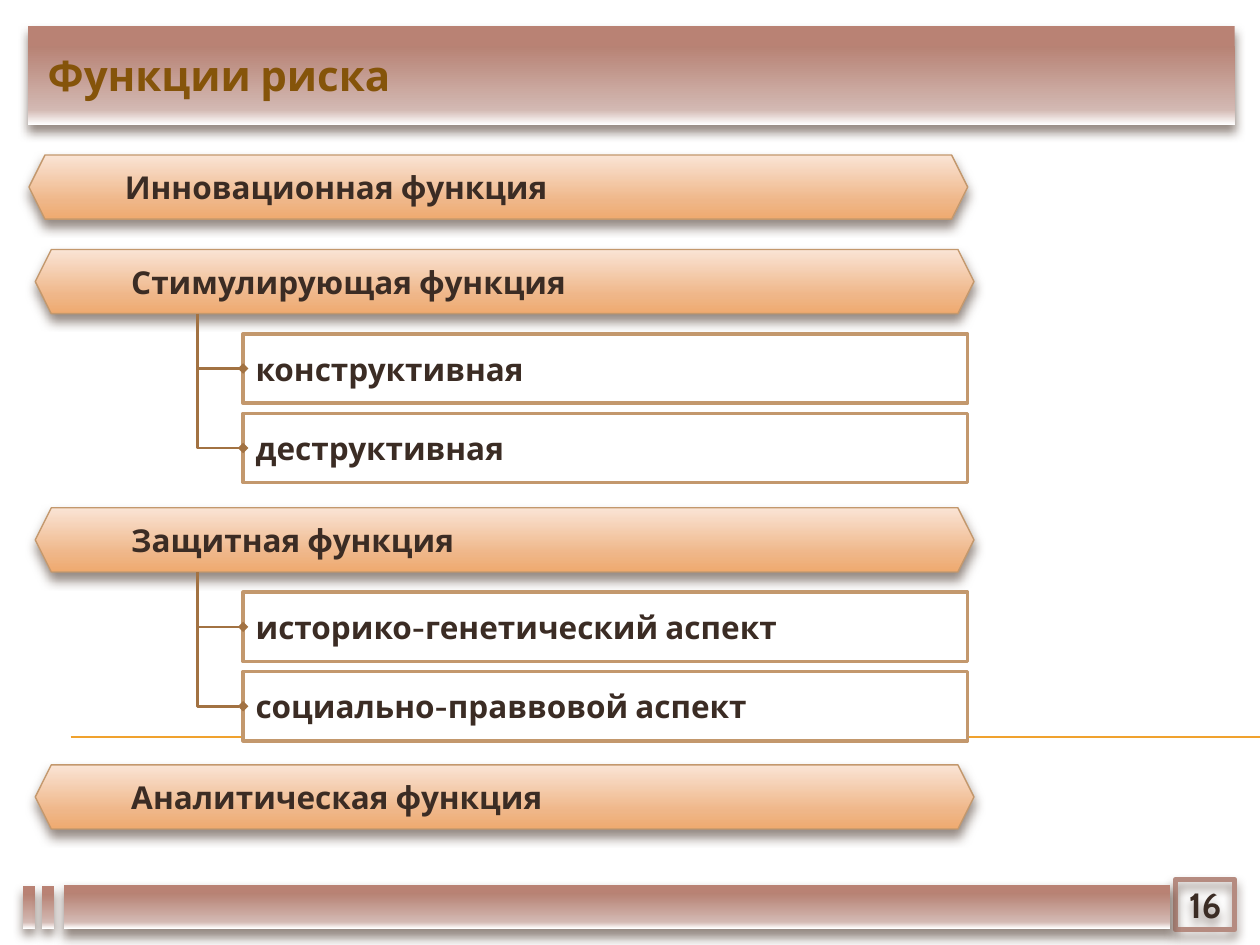
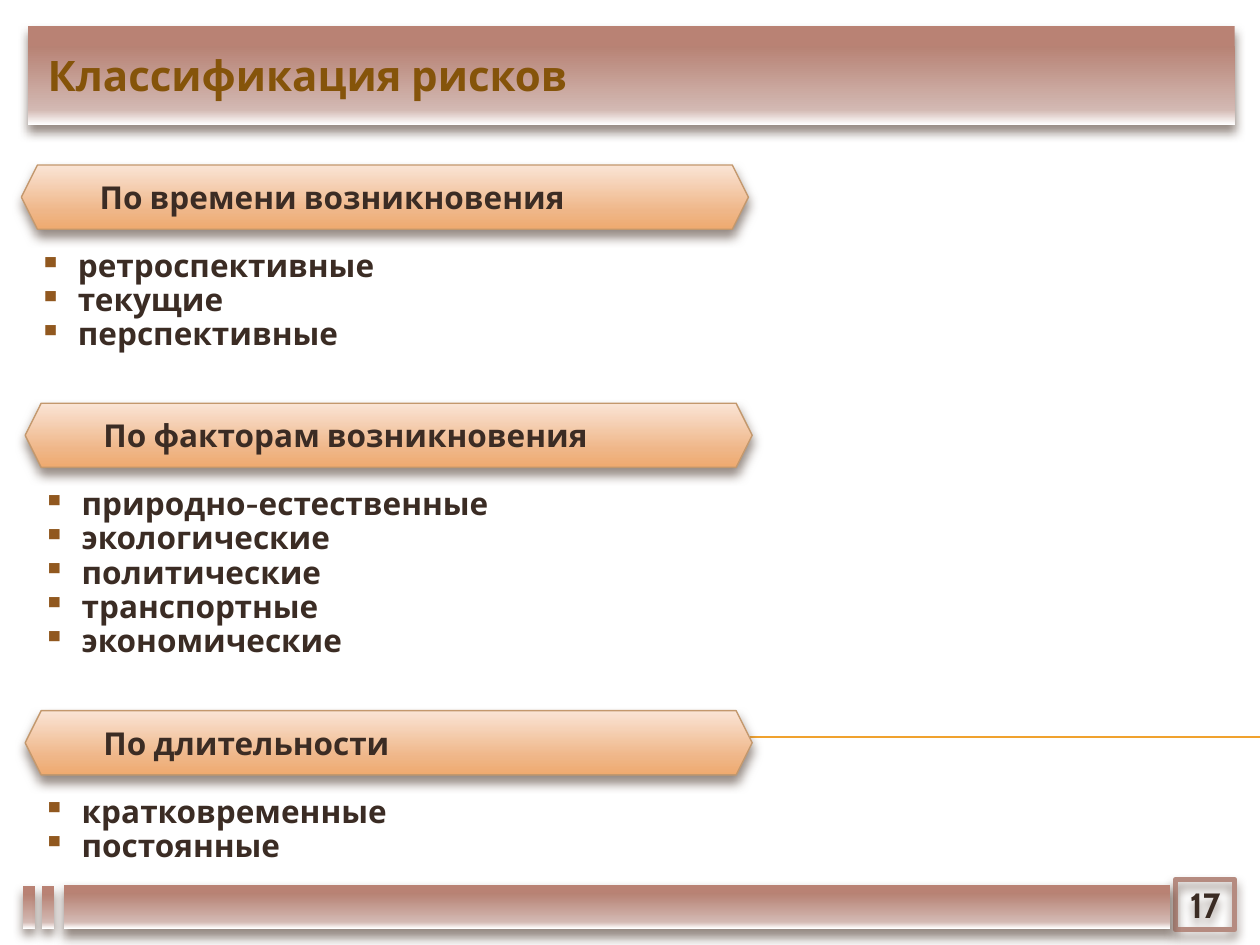
"""Build two slides on the functions and the classification of risk."""
from dataclasses import dataclass

from lxml.etree import SubElement
from pptx import Presentation
from pptx.dml.color import RGBColor
from pptx.enum.shapes import MSO_CONNECTOR, MSO_SHAPE
from pptx.enum.text import MSO_ANCHOR, PP_ALIGN
from pptx.oxml.ns import qn
from pptx.shapes.autoshape import Shape
from pptx.shapes.connector import Connector
from pptx.slide import Slide
from pptx.text.text import TextFrame
from pptx.util import Inches, Pt

FONT = "Cabin"
INK = RGBColor(0x3B, 0x2C, 0x24)
TITLE_BROWN = RGBColor(0x85, 0x54, 0x0A)
BULLET_BROWN = RGBColor(0x91, 0x58, 0x1F)
BRANCH_BROWN = RGBColor(0xA2, 0x72, 0x42)
OUTLINE_TAN = RGBColor(0xC3, 0x98, 0x6D)
NUMBER_FRAME = RGBColor(0xB5, 0x8B, 0x80)
RULE_GOLD = RGBColor(0xF0, 0xA2, 0x2E)
SHADOW_BROWN = RGBColor(0x4E, 0x3B, 0x30)
WHITE = RGBColor(0xFF, 0xFF, 0xFF)

Gradient = tuple[tuple[int, RGBColor], ...]
BAND_GRADIENT: Gradient = (
    (0, RGBColor(0xB9, 0x82, 0x74)),
    (20, RGBColor(0xB7, 0x82, 0x74)),
    (85, RGBColor(0xD3, 0xB9, 0xB3)),
    (100, WHITE),
)
HEADING_GRADIENT: Gradient = (
    (0, RGBColor(0xFA, 0xE4, 0xD5)),
    (72, RGBColor(0xEF, 0xB6, 0x88)),
    (100, RGBColor(0xEF, 0xAA, 0x6F)),
)

HEADING_HEIGHT = 0.51
ASPECT_LEFT, ASPECT_WIDTH, ASPECT_HEIGHT = 1.93, 5.75, 0.55
ASPECT_OFFSET, ASPECT_STEP = 0.67, 0.63
TRUNK_LEFT = 1.57
LIST_OFFSET, LIST_SHIFT, LIST_WIDTH = 0.63, 0.04, 9.58
BULLET_INDENT = 0.31


@dataclass(frozen=True)
class Box:
    """Place of an element in inches."""

    left: float
    top: float
    width: float
    height: float


@dataclass(frozen=True)
class Section:
    """Heading with the aspects or kinds that belong to it."""

    heading: str
    left: float
    top: float
    items: tuple[str, ...] = ()


BANDS = (
    Box(0.22, 0.21, 9.58, 0.78),
    Box(0.18, 7.03, 0.1, 0.34),
    Box(0.33, 7.03, 0.1, 0.34),
    Box(0.51, 7.02, 8.78, 0.35),
)
RISK_FUNCTIONS = (
    Section("Инновационная функция", 0.23, 1.23),
    Section("Стимулирующая функция", 0.28, 1.98, ("конструктивная", "деструктивная")),
    Section("Защитная функция", 0.28, 4.03,
            ("историко-генетический аспект", "социально-праввовой аспект")),
    Section("Аналитическая функция", 0.28, 6.07),
)
RISK_CLASSES = (
    Section("По времени возникновения", 0.17, 1.31,
            ("ретроспективные", "текущие", "перспективные")),
    Section("По факторам возникновения", 0.2, 3.2,
            ("природно-естественные", "экологические", "политические",
             "транспортные", "экономические")),
    Section("По длительности", 0.2, 5.64, ("кратковременные", "постоянные")),
)


def write_lines(frame: TextFrame, lines: tuple[str, ...], size: int,
                color: RGBColor = INK, align: PP_ALIGN = PP_ALIGN.LEFT) -> None:
    """Write one bold paragraph per line."""
    frame.word_wrap = True
    for index, line in enumerate(lines):
        paragraph = frame.paragraphs[0] if index == 0 else frame.add_paragraph()
        paragraph.alignment = align
        run = paragraph.add_run()
        run.text = line
        run.font.name = FONT
        run.font.size = Pt(size)
        run.font.bold = True
        run.font.color.rgb = color


def add_box(slide: Slide, preset: MSO_SHAPE, box: Box) -> Shape:
    """Add a preset shape without fill, line or shadow."""
    shape = slide.shapes.add_shape(preset, Inches(box.left), Inches(box.top),
                                   Inches(box.width), Inches(box.height))
    shape.shadow.inherit = False
    shape.fill.background()
    shape.line.fill.background()
    shape.text_frame.vertical_anchor = MSO_ANCHOR.MIDDLE
    return shape


def outline(shape: Shape | Connector, color: RGBColor, width: float) -> None:
    """Give a shape or connector a solid line."""
    shape.line.color.rgb = color
    shape.line.width = Pt(width)


def fill_gradient(shape: Shape, gradient: Gradient) -> None:
    """Fill a shape with a gradient running from top to bottom."""
    shape.fill.gradient()
    shape.fill.gradient_angle = 270
    stops = shape.element.spPr.find(qn("a:gradFill")).find(qn("a:gsLst"))
    for stop in list(stops):
        stops.remove(stop)
    for position, color in gradient:
        stop = SubElement(stops, qn("a:gs"), pos=str(position * 1000))
        SubElement(stop, qn("a:srgbClr"), val=str(color))


def drop_shadow(shape: Shape) -> None:
    """Cast a soft brown shadow below a shape."""
    effects = shape.element.spPr.find(qn("a:effectLst"))
    shadow = SubElement(effects, qn("a:outerShdw"), blurRad=str(Pt(6)), dist=str(Pt(4)),
                        dir="5400000", rotWithShape="0")
    color = SubElement(shadow, qn("a:srgbClr"), val=str(SHADOW_BROWN))
    SubElement(color, qn("a:alpha"), val="60000")


def add_line(slide: Slide, kind: MSO_CONNECTOR, start: tuple[float, float],
             end: tuple[float, float], color: RGBColor, width: float) -> Connector:
    """Add a connector without a shadow."""
    connector = slide.shapes.add_connector(kind, *map(Inches, start + end))
    outline(connector, color, width)
    SubElement(connector.element.spPr, qn("a:effectLst"))
    return connector


def add_branch(slide: Slide, top: float, bottom: float) -> None:
    """Draw a branch going down the trunk and right to an aspect."""
    drop, reach = bottom - top, ASPECT_LEFT - TRUNK_LEFT
    center_x, center_y = TRUNK_LEFT + reach / 2, top + drop / 2
    branch = add_line(slide, MSO_CONNECTOR.ELBOW,
                      (center_x + drop / 2, center_y - reach / 2),
                      (center_x - drop / 2, center_y + reach / 2), BRANCH_BROWN, 1.5)
    properties = branch.element.spPr
    properties.find(qn("a:xfrm")).set("rot", "16200000")
    properties.find(qn("a:prstGeom")).set("prst", "bentConnector2")
    SubElement(properties.find(qn("a:ln")), qn("a:tailEnd"), type="diamond")


def add_text(slide: Slide, box: Box, lines: tuple[str, ...], size: int,
             color: RGBColor = INK) -> TextFrame:
    """Add a text box and return its text frame."""
    frame = slide.shapes.add_textbox(Inches(box.left), Inches(box.top),
                                     Inches(box.width), Inches(box.height)).text_frame
    write_lines(frame, lines, size, color)
    return frame


def add_heading(slide: Slide, section: Section, width: float) -> None:
    """Draw the hexagonal heading of a section."""
    heading = add_box(slide, MSO_SHAPE.HEXAGON,
                      Box(section.left, section.top, width, HEADING_HEIGHT))
    fill_gradient(heading, HEADING_GRADIENT)
    outline(heading, OUTLINE_TAN, 0.79)
    drop_shadow(heading)
    write_lines(heading.text_frame, (section.heading,), 18)


def add_aspects(slide: Slide, section: Section) -> None:
    """Draw the framed aspects of a section and their branches."""
    tops = [section.top + ASPECT_OFFSET + index * ASPECT_STEP
            for index in range(len(section.items))]
    for top, item in zip(tops, section.items):
        aspect = add_box(slide, MSO_SHAPE.RECTANGLE,
                         Box(ASPECT_LEFT, top, ASPECT_WIDTH, ASPECT_HEIGHT))
        aspect.fill.solid()
        aspect.fill.fore_color.rgb = WHITE
        outline(aspect, OUTLINE_TAN, 2)
        write_lines(aspect.text_frame, (item,), 18)
    for top in tops:
        add_branch(slide, section.top + HEADING_HEIGHT, top + ASPECT_HEIGHT / 2)


def add_kinds(slide: Slide, section: Section) -> None:
    """Write the bulleted kinds of a section."""
    height = 0.41 + 0.27 * len(section.items)
    frame = add_text(slide, Box(section.left + LIST_SHIFT, section.top + LIST_OFFSET,
                                LIST_WIDTH, height), section.items, 18)
    for paragraph in frame.paragraphs:
        paragraph.line_spacing = 0.9
        properties = paragraph._p.get_or_add_pPr()
        properties.set("marL", str(Inches(BULLET_INDENT)))
        properties.set("indent", str(-Inches(BULLET_INDENT)))
        color = SubElement(properties, qn("a:buClr"))
        SubElement(color, qn("a:srgbClr"), val=str(BULLET_BROWN))
        SubElement(properties, qn("a:buChar"), char="▪")


def add_framed_slide(deck: Presentation, title: str, number: int) -> Slide:
    """Add a slide with the shared rule, bands, number and title."""
    slide = deck.slides.add_slide(deck.slide_layouts[6])
    add_line(slide, MSO_CONNECTOR.STRAIGHT, (0.56, 5.85), (10, 5.85), RULE_GOLD, 0.75)
    page_number = add_box(slide, MSO_SHAPE.RECTANGLE, Box(9.33, 6.98, 0.47, 0.4))
    outline(page_number, NUMBER_FRAME, 3)
    drop_shadow(page_number)
    write_lines(page_number.text_frame, (str(number),), 20, align=PP_ALIGN.CENTER)
    page_number.text_frame.word_wrap = False
    for box in BANDS:
        band = add_box(slide, MSO_SHAPE.RECTANGLE, box)
        fill_gradient(band, BAND_GRADIENT)
        drop_shadow(band)
    add_text(slide, Box(0.28, 0.34, 9.32, 0.5), (title,), 24, TITLE_BROWN)
    return slide


def main() -> None:
    """Build and save the presentation."""
    deck = Presentation()
    deck.slide_width, deck.slide_height = Inches(10), Inches(7.5)

    functions_slide = add_framed_slide(deck, "Функции риска", 16)
    for section in RISK_FUNCTIONS:
        add_heading(functions_slide, section, 7.45)
        add_aspects(functions_slide, section)

    classes_slide = add_framed_slide(deck, "Классификация рисков", 17)
    for section in RISK_CLASSES:
        add_kinds(classes_slide, section)
        add_heading(classes_slide, section, 5.77)

    deck.save("out.pptx")


if __name__ == "__main__":
    main()
